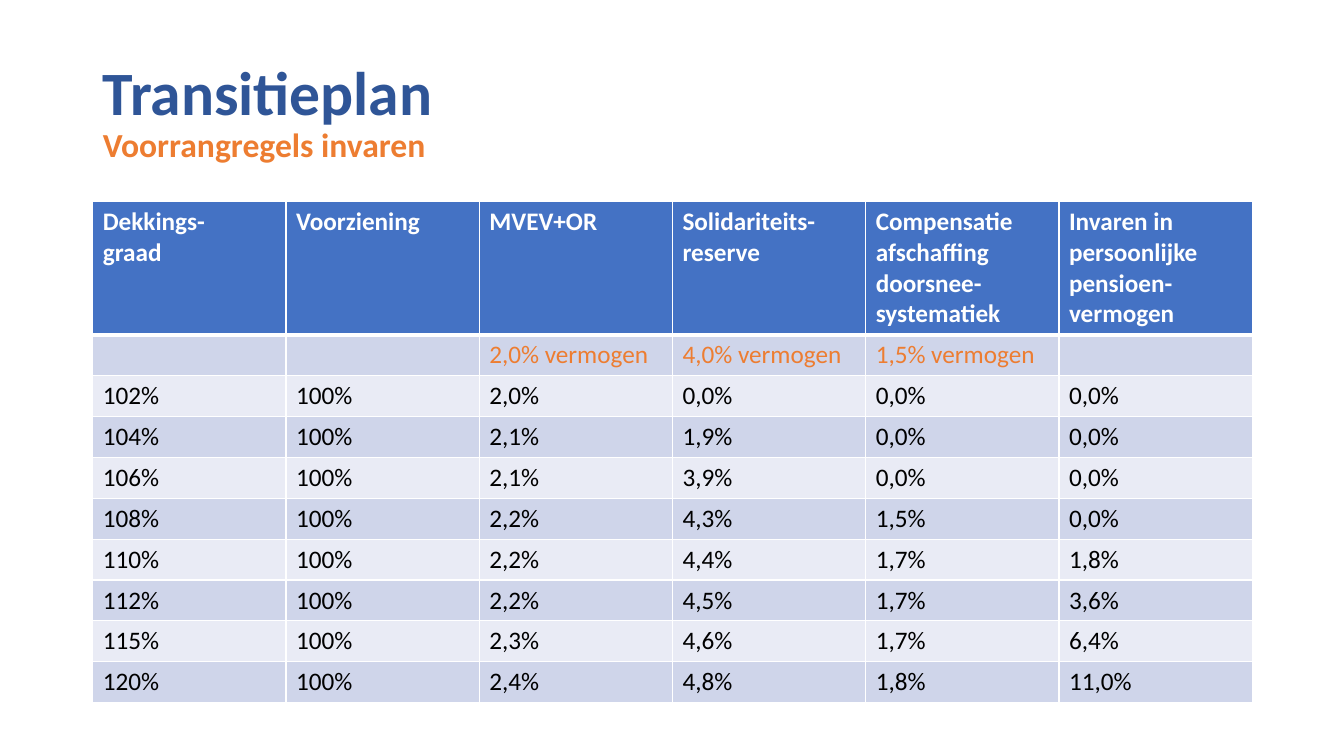
from dataclasses import dataclass

from lxml.etree import SubElement
from pptx import Presentation
from pptx.dml.color import RGBColor
from pptx.enum.text import MSO_ANCHOR, MSO_AUTO_SIZE, PP_ALIGN
from pptx.oxml.ns import qn
from pptx.util import Inches, Pt


@dataclass(frozen=True)
class Theme:
    """Colours, font and type sizes of the slide."""

    font: str = "Calibri"
    title_size: int = 44
    subtitle_size: int = 24
    table_size: int = 18
    title: str = "2F5597"
    accent: str = "ED7D31"
    header: str = "4472C4"
    bands: tuple = ("CFD5EA", "E9EBF5")
    white: str = "FFFFFF"
    black: str = "000000"


THEME = Theme()
HEADERS = [
    "Dekkings-\ngraad",
    "Voorziening",
    "MVEV+OR",
    "Solidariteits-reserve",
    "Compensatie afschaffing doorsnee-systematiek",
    "Invaren in persoonlijke pensioen-vermogen",
]
SHARES = ["", "", "2,0% vermogen", "4,0% vermogen", "1,5% vermogen", ""]
RESULTS = [
    ["102%", "100%", "2,0%", "0,0%", "0,0%", "0,0%"],
    ["104%", "100%", "2,1%", "1,9%", "0,0%", "0,0%"],
    ["106%", "100%", "2,1%", "3,9%", "0,0%", "0,0%"],
    ["108%", "100%", "2,2%", "4,3%", "1,5%", "0,0%"],
    ["110%", "100%", "2,2%", "4,4%", "1,7%", "1,8%"],
    ["112%", "100%", "2,2%", "4,5%", "1,7%", "3,6%"],
    ["115%", "100%", "2,3%", "4,6%", "1,7%", "6,4%"],
    ["120%", "100%", "2,4%", "4,8%", "1,8%", "11,0%"],
]


def format_font(font, size, color, bold=False):
    """Apply the theme font with a size, colour and weight."""
    values = {"name": THEME.font, "size": Pt(size), "bold": bold}
    for name, value in values.items():
        setattr(font, name, value)
    font.color.rgb = RGBColor.from_string(color)


def add_title(slide, title, subtitle):
    """Fill the title placeholder with a title and a subtitle line."""
    shape = slide.shapes.title
    box = {"left": 0.92, "top": 0.4, "width": 11.5, "height": 1.45}
    for name, value in box.items():
        setattr(shape, name, Inches(value))
    frame = shape.text_frame
    frame_values = {
        "word_wrap": True,
        "auto_size": MSO_AUTO_SIZE.NONE,
        "vertical_anchor": MSO_ANCHOR.MIDDLE,
    }
    for name, value in frame_values.items():
        setattr(frame, name, value)
    paragraph = frame.paragraphs[0]
    paragraph.alignment = PP_ALIGN.LEFT
    paragraph.line_spacing = 0.9
    title_run = paragraph.add_run()
    title_run.text = title
    format_font(title_run.font, THEME.title_size, THEME.title, True)
    paragraph.add_line_break()
    subtitle_run = paragraph.add_run()
    subtitle_run.text = subtitle
    format_font(subtitle_run.font, THEME.subtitle_size, THEME.accent, True)


def add_borders(cell, widths):
    """Draw white cell borders with a width in points for each side."""
    properties = cell._tc.get_or_add_tcPr()
    for side, width in widths.items():
        line = SubElement(properties, qn(f"a:ln{side}"), w=str(Pt(width)))
        fill = SubElement(line, qn("a:solidFill"))
        SubElement(fill, qn("a:srgbClr"), val=THEME.white)


def fill_cell(cell, text, fill, color, bold, borders):
    """Set the text, fill and borders of one table cell."""
    add_borders(cell, borders)
    cell.fill.solid()
    cell.fill.fore_color.rgb = RGBColor.from_string(fill)
    cell.text = text
    for paragraph in cell.text_frame.paragraphs:
        format_font(paragraph.font, THEME.table_size, color, bold)
        for run in paragraph.runs:
            format_font(run.font, THEME.table_size, color, bold)


def row_style(index):
    """Return the fill, text colour, weight and borders of a table row."""
    borders = {"L": 1, "R": 1, "T": 1, "B": 1}
    if index == 0:
        return THEME.header, THEME.white, True, borders | {"B": 3}
    fill = THEME.bands[(index - 1) % 2]
    if index == 1:
        return fill, THEME.accent, False, borders | {"T": 3}
    return fill, THEME.black, False, borders


def add_priority_table(slide, rows):
    """Add the table with a tall header and equal rows below it."""
    width, header_height, body_height = Inches(11.5), Inches(1.31), Inches(3.65)
    table = slide.shapes.add_table(
        len(rows), len(rows[0]), Inches(0.92), Inches(2),
        width, header_height + body_height,
    ).table
    for column in table.columns:
        column.width = width // len(rows[0])
    for index, texts in enumerate(rows):
        row = table.rows[index]
        row.height = body_height // (len(rows) - 1) if index else header_height
        for cell, text in zip(row.cells, texts):
            fill_cell(cell, text, *row_style(index))


def main():
    """Build and save the slide."""
    presentation = Presentation()
    presentation.slide_width = Inches(13.33)
    presentation.slide_height = Inches(7.5)
    slide = presentation.slides.add_slide(presentation.slide_layouts[5])
    add_title(slide, "Transitieplan", "Voorrangregels invaren")
    add_priority_table(slide, [HEADERS, SHARES, *RESULTS])
    presentation.save("out.pptx")


if __name__ == "__main__":
    main()
